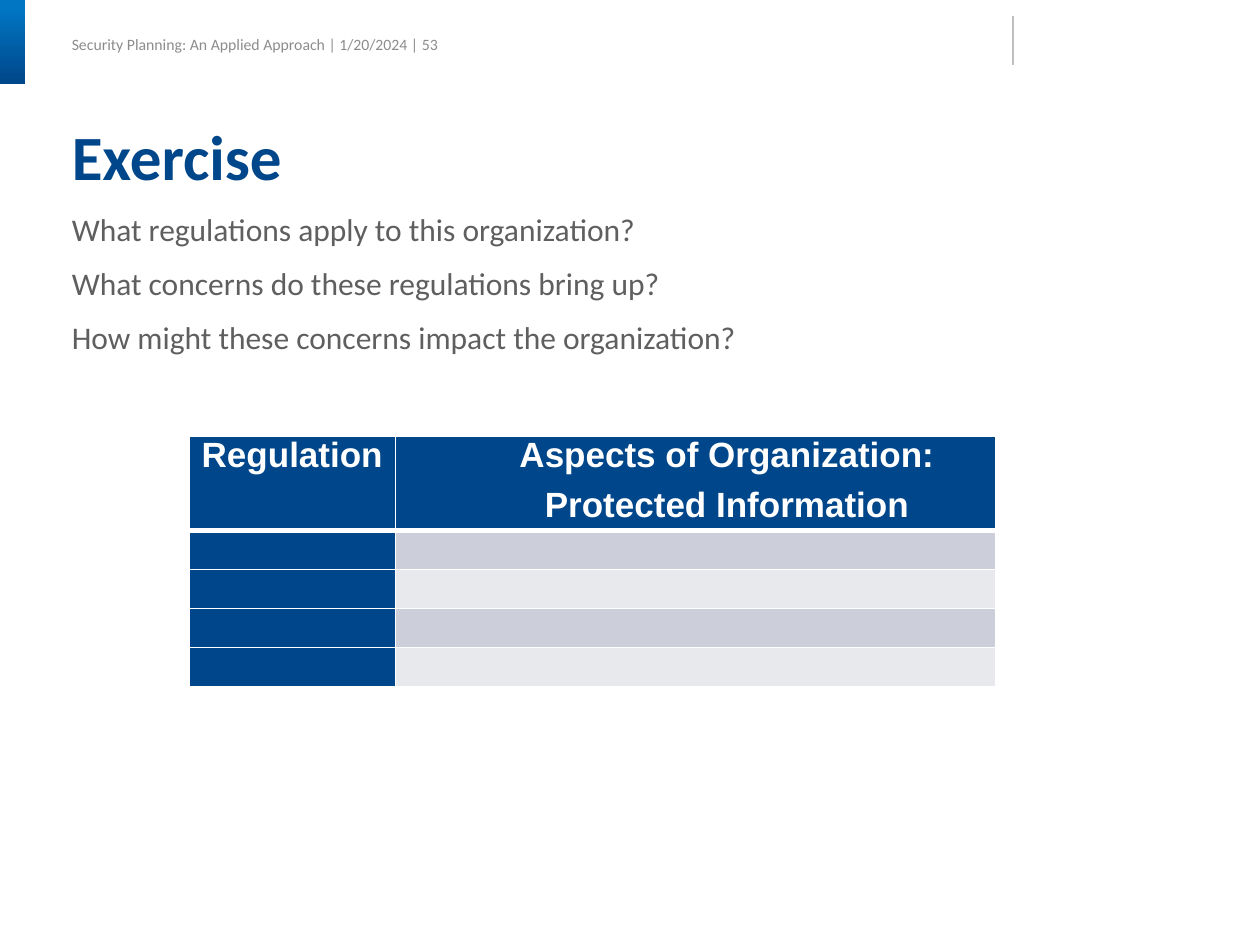
from lxml import etree
from pptx import Presentation
from pptx import util as u
from pptx.dml.color import RGBColor
from pptx.enum import shapes, text
from pptx.oxml.ns import qn

NAVY = RGBColor(0x00, 0x46, 0x8A)
BLUE = RGBColor(0x01, 0x76, 0xC3)
GREY = RGBColor(0x5F, 0x5F, 0x5F)
PALE = RGBColor(0x8C, 0x8C, 0x8C)
RULE = RGBColor(0xBF, 0xBF, 0xBF)
WHITE = RGBColor(0xFF, 0xFF, 0xFF)
BANDS = [RGBColor(0xCC, 0xCF, 0xDA), RGBColor(0xE7, 0xE9, 0xED)]
LEFT = u.Inches(0.57)


def write(frame, lines, size, color, font="Calibri", bold=False):
    """Put each line in its own paragraph and return the paragraphs."""
    for i, line in enumerate(lines):
        para = frame.paragraphs[0] if i == 0 else frame.add_paragraph()
        run = para.add_run()
        run.text = line
        run.font.name, run.font.size, run.font.bold = font, u.Pt(size), bold
        run.font.color.rgb = color
    return frame.paragraphs


def edge(cell, side, width):
    """Draw a white border on one side of a cell."""
    line = etree.SubElement(cell._tc.get_or_add_tcPr(), qn(f"a:ln{side}"), w=str(u.Pt(width)))
    fill = etree.SubElement(line, qn("a:solidFill"))
    etree.SubElement(fill, qn("a:srgbClr"), val=str(WHITE))


deck = Presentation()
deck.slide_width, deck.slide_height = u.Inches(10), u.Inches(7.5)
slide = deck.slides.add_slide(deck.slide_layouts[6])
items = slide.shapes

# Corner tab and header rule
tab = items.add_shape(shapes.MSO_SHAPE.RECTANGLE, 0, 0, u.Inches(0.2), u.Inches(0.67))
tab.shadow.inherit = False
tab.line.fill.background()
tab.fill.gradient()
tab.fill.gradient_angle = 270
for stop, color, place in zip(tab.fill.gradient_stops, (BLUE, NAVY), (0.1, 1)):
    stop.color.rgb, stop.position = color, place

rule = items.add_connector(shapes.MSO_CONNECTOR.STRAIGHT, u.Inches(8.04), u.Inches(0.13),
                           u.Inches(8.04), u.Inches(0.52))
rule.line.color.rgb, rule.line.width = RULE, u.Pt(0.75)
etree.SubElement(rule._element.spPr, qn("a:effectLst"))

# Header, title and questions share the left margin
blocks = [
    (0.24, 4, 0.23, 9, PALE, False, ["Security Planning: An Applied Approach | 1/20/2024 | 53"]),
    (1, 8.9, 0.55, 36, NAVY, True, ["Exercise"]),
    (1.66, 8.9, 1.34, 18, GREY, False, [
        "What regulations apply to this organization?",
        "What concerns do these regulations bring up?",
        "How might these concerns impact the organization?"]),
]
frames = []
for top, width, height, size, color, bold, lines in blocks:
    box = items.add_textbox(LEFT, u.Inches(top), u.Inches(width), u.Inches(height))
    frame = box.text_frame
    frame.word_wrap = True
    frame.margin_left = frame.margin_right = frame.margin_top = frame.margin_bottom = 0
    write(frame, lines, size, color, bold=bold)
    frames.append(frame)

header, title, body = frames
header.vertical_anchor = text.MSO_ANCHOR.MIDDLE
title.paragraphs[0].line_spacing = 0.9
for i, para in enumerate(body.paragraphs):
    para.line_spacing = u.Pt(22)
    para.space_before = u.Pt(9 if i else 0)

# Regulation table
heads = [["Regulation"], ["Aspects of Organization:", "Protected Information"]]
rows = [0.71] + [0.31] * 4
cols = [1.64, 4.76]
grid = items.add_table(len(rows), len(cols), u.Inches(1.5), u.Inches(3.46),
                       u.Inches(sum(cols)), u.Inches(sum(rows))).table
for col, width in zip(grid.columns, cols):
    col.width = u.Inches(width)
for r, height in enumerate(rows):
    grid.rows[r].height = u.Inches(height)
    for c in range(len(cols)):
        cell = grid.cell(r, c)
        cell.margin_left = cell.margin_right = u.Inches(0.07)
        cell.margin_top = cell.margin_bottom = 0
        for side in "LRTB":
            thick = (r, side) in ((0, "B"), (1, "T"))
            edge(cell, side, 3 if thick else 1)
        cell.fill.solid()
        cell.fill.fore_color.rgb = NAVY if r == 0 or c == 0 else BANDS[(r - 1) % 2]
        if r:
            cell.text_frame.paragraphs[0].font.size = u.Pt(12)
            continue
        for para in write(cell.text_frame, heads[c], 20, WHITE, "Arial", True):
            para.alignment = text.PP_ALIGN.CENTER
            para.space_after = u.Pt(6)
            if c:
                para._p.get_or_add_pPr().set("indent", str(u.Inches(0.5)))

deck.save("out.pptx")
